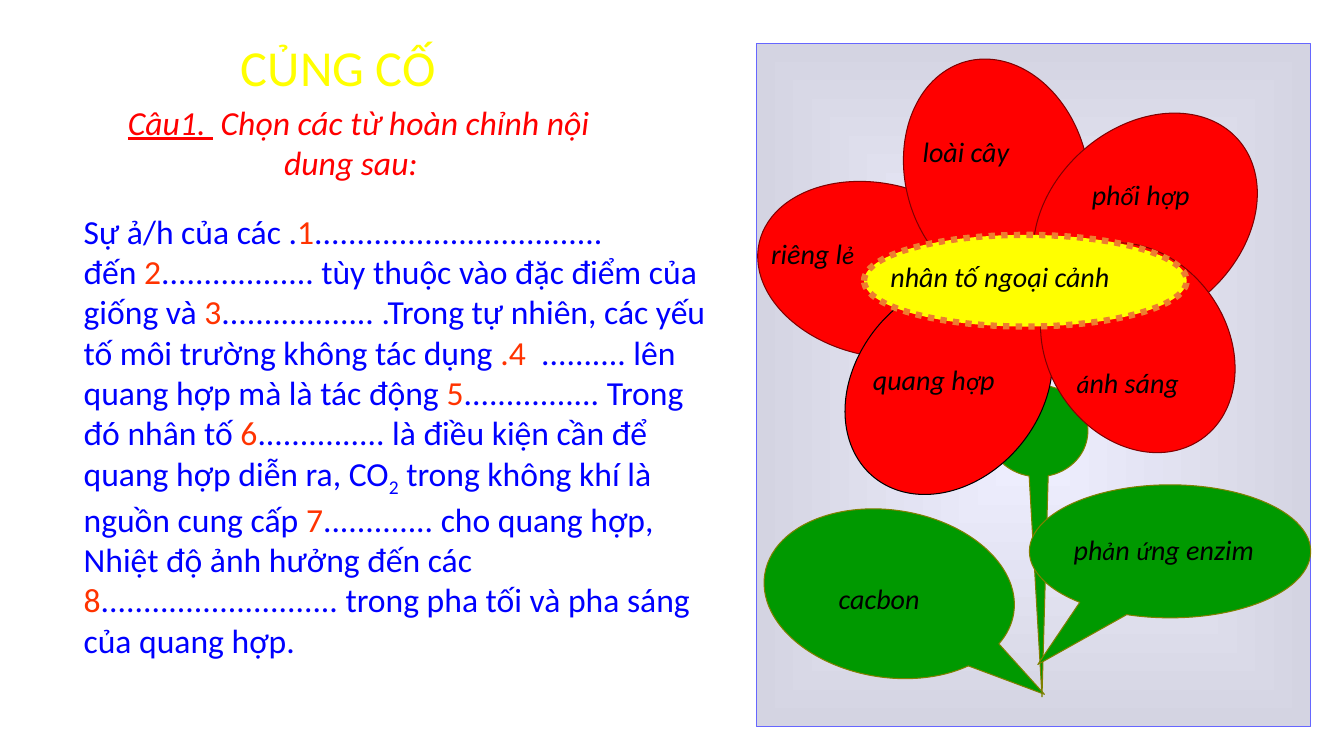
"""Builds a fill-in-the-blank review slide with a flower of answer words."""
from lxml import etree
from pptx import Presentation
from pptx.dml.color import RGBColor
from pptx.enum import dml, shapes, text
from pptx.oxml.ns import qn
from pptx.util import Inches, Pt

TITLE = ("CỦNG CỐ", (2.29, 0.31, 3.08, 0.71))
TASK = ("  |Câu1. | Chọn các từ hoàn chỉnh nội dung sau:", (0.71, 0.96, 5.54, 0.91))
BODY_BOX = (0.73, 2.04, 6.37, 4.54)
BODY = [
    "Sự ả/h của các .|1|..................................",
    "đến |2|.................. tùy thuộc vào đặc điểm của giống và |3|"
    ".................. .Trong tự nhiên, các yếu tố môi trường không tác dụng |.4|"
    "  .......... lên quang hợp mà là tác động |5|................ Trong đó nhân tố |6|"
    "............... là điều kiện cần để quang hợp diễn ra, CO|_2| trong không khí là "
    "nguồn cung cấp |7|............. cho quang hợp, Nhiệt độ ảnh hưởng đến các |8|"
    "............................ trong pha tối và pha sáng của quang hợp.",
]
FLOWER = [
    ("panel", (7.5, 0.43, 5.5, 6.78), 0, ()),
    ("petal", (7.5, 1.82, 2.41, 1.71), 12.8, ()),
    ("petal", (8.72, 0.83, 2.33, 1.81), 255.1, ()),
    ("petal", (10.13, 1.26, 2.46, 1.88), 318.3, ()),
    ("leaf", (9.8, 3.82, 0.99, 0.91), 0, (0.04, 2.9)),
    ("front", (8.24, 2.91, 2.34, 1.84), 309.6, ()),
    ("leaf", (10.21, 4.81, 2.79, 1.32), 0, (-0.47, 0.85)),
    ("leaf", (7.99, 4.64, 1.66, 2.5), 278.9, (-0.45, 0.67)),
    ("petal", (10.18, 2.56, 2.21, 1.78), 55.4, ()),
    ("heart", (8.57, 2.33, 3.2, 0.91), 0, ()),
]
WORDS = [
    (" nhân tố ngoại cảnh", 8.67, 2.53, 3.17),
    ("riêng l|ẻ", 7.55, 2.3, 1.67),
    ("ph|ố|i h|ợ|p", 10.73, 1.71, 2.08),
    ("quang h|ợ|p", 8.56, 3.55, 1.83),
    ("|á|nh sáng", 10.58, 3.58, 1.42),
    (" loài cây", 8.99, 1.29, 1.67),
    ("ph|ả|n |ứ|ng enzim", 10.55, 5.23, 2.25),
    ("cacbon", 8.22, 5.72, 1.58),
]
THEME = {
    "font": "Calibri", "title": "FFFF00", "task": "FF0000", "body": "0000FF",
    "blank": "FF3300", "word": "000000", "mid": "EFEFFF", "edge": "D4D4E2",
    "big": 36, "text": 24, "label": 20, "small": 18, "row": 0.44,
}
KINDS = {
    "panel": (shapes.MSO_SHAPE.RECTANGLE, None, "6666FF", 0.75),
    "petal": (shapes.MSO_SHAPE.OVAL, "FF0000", "800000", 0.75),
    "front": (shapes.MSO_SHAPE.OVAL, "FF0000", "000000", 0.75),
    "leaf": (shapes.MSO_SHAPE.OVAL_CALLOUT, "009900", "808000", 0.75),
    "heart": (shapes.MSO_SHAPE.OVAL, "FFFF00", "ED7D31", 4.5),
}


def rgb(name):
    return RGBColor.from_string(THEME.get(name, name))


def place(item, box):
    item.left, item.top, item.width, item.height = map(Inches, box)


def frame(item):
    tf = item.text_frame
    tf.word_wrap = True
    tf.auto_size = text.MSO_AUTO_SIZE.NONE
    tf.vertical_anchor = text.MSO_ANCHOR.TOP
    return tf


def write(para, marked, color, size, italic=False):
    """Adds the runs between bars and returns those in odd places."""
    odd = []
    for i, part in enumerate(marked.split("|")):
        if not part:
            continue
        run = para.add_run()
        run.text = part
        run.font.name, run.font.size = THEME["font"], Pt(THEME[size])
        run.font.italic = italic
        run.font.color.rgb = rgb(color)
        if i % 2:
            odd.append(run)
    return odd


def shade(fill):
    """Sets a gradient that runs from the middle to the edges."""
    fill.gradient()
    for stop, name, pos in zip(fill.gradient_stops, ("mid", "edge"), (0, 1)):
        stop.color.rgb, stop.position = rgb(name), pos


def bloom(slide):
    for kind, box, turn, adjust in FLOWER:
        form, color, edge, width = KINDS[kind]
        part = slide.shapes.add_shape(form, *map(Inches, box))
        part.shadow.inherit = False
        part.rotation = turn
        for i, value in enumerate(adjust):
            part.adjustments[i] = value
        part.line.color.rgb, part.line.width = rgb(edge), Pt(width)
        if kind == "heart":
            part.line.dash_style = dml.MSO_LINE.ROUND_DOT
        if color:
            part.fill.solid()
            part.fill.fore_color.rgb = rgb(color)
        else:
            shade(part.fill)
            grad = part._element.spPr.find(qn("a:gradFill"))
            grad.remove(grad.find(qn("a:lin")))
            way = etree.SubElement(grad, qn("a:path"), path="rect")
            etree.SubElement(way, qn("a:fillToRect"), l="50000", t="50000", r="50000", b="50000")


def main():
    deck = Presentation()
    deck.slide_width, deck.slide_height = Inches(13.33), Inches(7.5)
    slide = deck.slides.add_slide(deck.slide_layouts[1])
    bloom(slide)

    head, body = slide.placeholders
    place(head, TITLE[1])
    para = frame(head).paragraphs[0]
    para.alignment = text.PP_ALIGN.LEFT
    write(para, TITLE[0], "title", "big")

    place(body, BODY_BOX)
    tf = frame(body)
    for i, line in enumerate(BODY):
        para = tf.add_paragraph() if i else tf.paragraphs[0]
        para.space_before = Pt(0)
        props = para._p.get_or_add_pPr()
        props.set("marL", "0")
        props.set("indent", "0")
        etree.SubElement(props, qn("a:buNone"))
        for run in write(para, line, "body", "text"):
            if run.text.startswith("_"):
                run.text = run.text[1:]
                run.font._element.set("baseline", "-25000")
            else:
                run.font.color.rgb = rgb("blank")

    task = slide.shapes.add_textbox(*map(Inches, TASK[1]))
    para = frame(task).paragraphs[0]
    para.alignment = text.PP_ALIGN.CENTER
    for run in write(para, TASK[0], "task", "text", True):
        run.font.underline = True

    for word, left, top, width in WORDS:
        box = slide.shapes.add_textbox(*map(Inches, (left, top, width, THEME["row"])))
        for run in write(frame(box).paragraphs[0], word, "word", "label", True):
            run.font.size = Pt(THEME["small"])

    deck.save("out.pptx")


if __name__ == "__main__":
    main()
